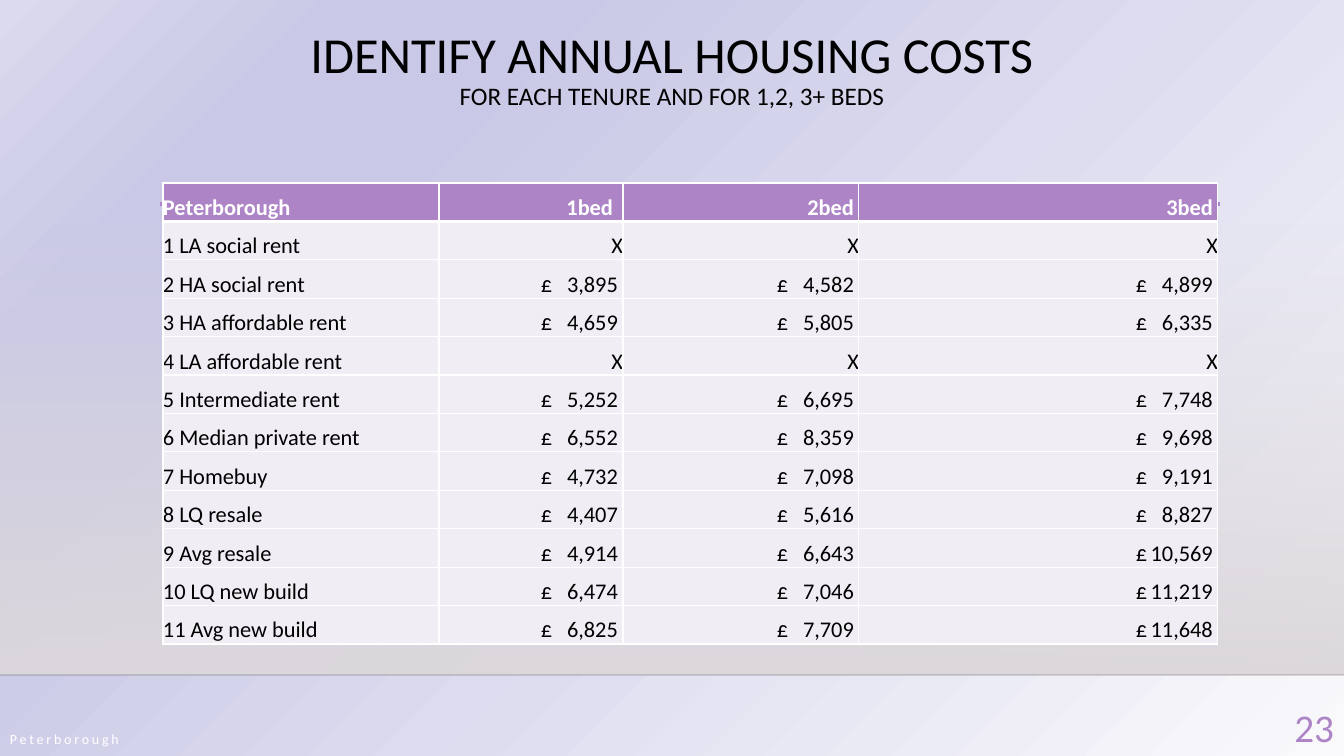
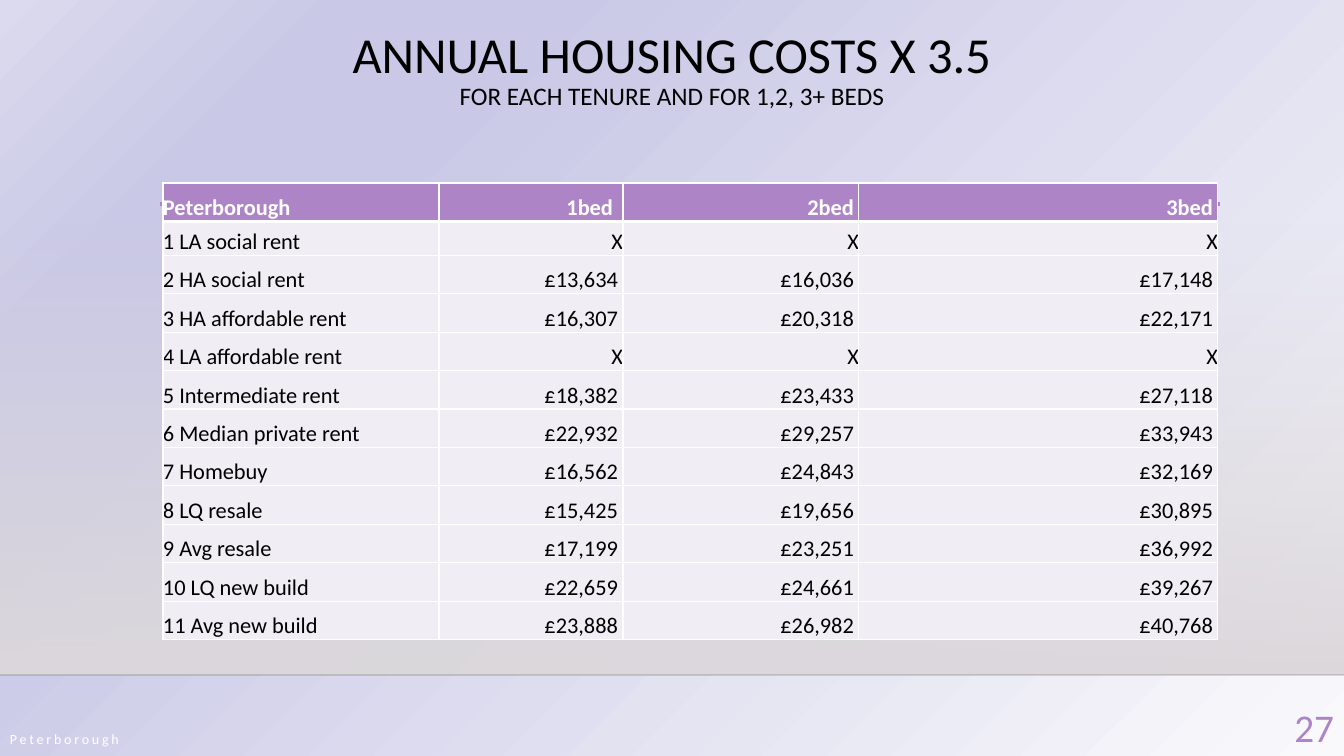
import pptx
import pptx.util
import pptx.dml.color
import pptx.enum.shapes
import pptx.enum.text
import pptx.oxml
import pptx.oxml.ns

SLIDE_W, SLIDE_H = 1344, 756
ALIGN = pptx.enum.text.PP_ALIGN
ANCHOR = pptx.enum.text.MSO_ANCHOR
qn = pptx.oxml.ns.qn

TENURES = ["LA social rent", "HA social rent", "HA affordable rent",
           "LA affordable rent", "Intermediate rent", "Median private rent",
           "Homebuy", "LQ resale", "Avg resale", "LQ new build", "Avg new build"]
HEADINGS = ["Peterborough", "1bed", "2bed", "3bed"]
NO_COST = ("X", "X", "X")
ANNUAL_COSTS = [
    NO_COST,
    ("3,895", "4,582", "4,899"),
    ("4,659", "5,805", "6,335"),
    NO_COST,
    ("5,252", "6,695", "7,748"),
    ("6,552", "8,359", "9,698"),
    ("4,732", "7,098", "9,191"),
    ("4,407", "5,616", "8,827"),
    ("4,914", "6,643", "10,569"),
    ("6,474", "7,046", "11,219"),
    ("6,825", "7,709", "11,648"),
]
INCOMES_NEEDED = [
    NO_COST,
    ("13,634", "16,036", "17,148"),
    ("16,307", "20,318", "22,171"),
    NO_COST,
    ("18,382", "23,433", "27,118"),
    ("22,932", "29,257", "33,943"),
    ("16,562", "24,843", "32,169"),
    ("15,425", "19,656", "30,895"),
    ("17,199", "23,251", "36,992"),
    ("22,659", "24,661", "39,267"),
    ("23,888", "26,982", "40,768"),
]


def px(n):
    return pptx.util.Emu(round(n * 12192000 / SLIDE_W))


def rgb(value):
    return pptx.dml.color.RGBColor.from_string(value)


def element(xml):
    ns = pptx.oxml.ns.nsdecls("a")
    return pptx.oxml.parse_xml(xml.replace(">", f" {ns}>", 1))


def set_gradient(holder, stops, direction):
    """Swap the solid fill in holder for a gradient of (place, colour, alpha)."""
    gs = "".join(f'<a:gs pos="{pos * 1000}"><a:srgbClr val="{color}">'
                 f'<a:alpha val="{alpha * 1000}"/></a:srgbClr></a:gs>'
                 for pos, color, alpha in stops)
    grad = element('<a:gradFill rotWithShape="1">'
                   f'<a:gsLst>{gs}</a:gsLst>{direction}</a:gradFill>')
    holder.replace(holder.find(qn("a:solidFill")), grad)


class Deck:
    FONT = "Calibri"
    BLACK, WHITE, ACCENT = "000000", "FFFFFF", "AD84C6"
    CELL, SHADE = "F1EDF5", "DCD8DC"
    COLUMNS = (276, 184, 236, 359)
    ROW_H = 461 / 12
    SPACE = 5

    def __init__(self):
        self.prs = pptx.Presentation()
        self.prs.slide_width, self.prs.slide_height = px(SLIDE_W), px(SLIDE_H)
        master = self.prs.slide_master
        master.background.fill.solid()
        stops = [(0, "F9F9FC", 100), (74, "C9C8E6", 100),
                 (83, "C9C8E6", 100), (100, "DBDAEE", 100)]
        set_gradient(master.element.find(".//" + qn("p:bgPr")), stops,
                     '<a:path path="circle"><a:fillToRect l="100000" t="100000"/></a:path>')

    def new_slide(self, title, subtitle, number):
        self.s = self.prs.slides.add_slide(self.prs.slide_layouts[5])
        # Shaded area and rules
        self.shade(0, 223, SLIDE_W, 452)
        self.rule(0, SLIDE_W, 675, "000001", 1, alpha=20)
        self.rule(160, 1220, 204, self.ACCENT, 2.5)
        # Title and footer
        self.title(title, subtitle)
        p = self.text("Peterborough", 0, 722, 548, 34, 10, self.WHITE,
                      ALIGN.LEFT, ANCHOR.MIDDLE)
        p.runs[0].font._element.set("spc", "200")
        self.text(str(number), 1255, 698, 89, 55, 28, self.ACCENT,
                  ALIGN.RIGHT, ANCHOR.TOP)

    def style(self, font, size, color, bold=False):
        font.name, font.size, font.bold = self.FONT, pptx.util.Pt(size), bold
        font.color.rgb = rgb(color)

    def shade(self, x, y, w, h):
        sp = self.s.shapes.add_shape(pptx.enum.shapes.MSO_SHAPE.RECTANGLE,
                                     px(x), px(y), px(w), px(h))
        sp.shadow.inherit = False
        sp.line.fill.background()
        sp.fill.solid()
        set_gradient(sp.element.spPr, [(0, self.SHADE, 0), (100, self.SHADE, 100)],
                     '<a:lin ang="5400000" scaled="0"/>')

    def rule(self, x1, x2, y, color, width, alpha=100):
        line = self.s.shapes.add_connector(pptx.enum.shapes.MSO_CONNECTOR.STRAIGHT,
                                           px(x1), px(y), px(x2), px(y))
        line.line.color.rgb = rgb(color)
        line.line.width = pptx.util.Pt(width)
        spPr = line.element.spPr
        spPr.find(".//" + qn("a:srgbClr")).append(
            element(f'<a:alpha val="{alpha * 1000}"></a:alpha>'))
        spPr.append(element("<a:effectLst></a:effectLst>"))

    def title(self, title, subtitle):
        sp = self.s.shapes.title
        sp.left, sp.top, sp.width, sp.height = px(71), px(14), px(1202), px(113)
        tf = sp.text_frame
        tf.auto_size = pptx.enum.text.MSO_AUTO_SIZE.NONE
        tf.vertical_anchor = ANCHOR.MIDDLE
        p = tf.paragraphs[0]
        p.text = f"{title}\v{subtitle}"
        p.alignment, p.line_spacing = ALIGN.CENTER, 0.9
        for r, size in zip(p.runs, (36, 18)):
            self.style(r.font, size, self.BLACK)

    def text(self, text, x, y, w, h, size, color, align, anchor):
        tf = self.s.shapes.add_textbox(px(x), px(y), px(w), px(h)).text_frame
        tf.word_wrap, tf.vertical_anchor = True, anchor
        p = tf.paragraphs[0]
        p.text, p.alignment = text, align
        self.style(p.runs[0].font, size, color)
        return p

    def cell(self, cell, text, fill, color, bold=False, align=ALIGN.LEFT,
             left=0, right=0, tab=None, top=1, bottom=1):
        cell.margin_left, cell.margin_right = px(left), px(right)
        cell.margin_top = cell.margin_bottom = 0
        cell.vertical_anchor = ANCHOR.BOTTOM
        p = cell.text_frame.paragraphs[0]
        p.text, p.alignment = text, align
        if tab:
            p._p.get_or_add_pPr().append(element(
                f'<a:tabLst><a:tab pos="{px(tab)}" algn="r"/></a:tabLst>'))
        self.style(p.runs[0].font, 16, color, bold)
        cell.fill.solid()
        cell.fill.fore_color.rgb = rgb(fill)
        tcPr = cell._tc.get_or_add_tcPr()
        for i, (side, pt) in enumerate(zip("LRTB", (1, 1, top, bottom))):
            tcPr.insert(i, element(
                f'<a:ln{side} w="{pptx.util.Pt(pt)}"><a:solidFill>'
                f'<a:srgbClr val="{self.WHITE}"/></a:solidFill></a:ln{side}>'))

    def cost_table(self, costs, accounting, first_row_h=ROW_H):
        """Accounting style lines up the pound signs at a fixed place."""
        heights = [self.ROW_H, first_row_h] + [self.ROW_H] * (len(costs) - 1)
        table = self.s.shapes.add_table(
            len(heights), len(self.COLUMNS), px(163), px(183),
            px(sum(self.COLUMNS)), px(sum(heights))).table
        table.horz_banding = False
        for column, width in zip(table.columns, self.COLUMNS):
            column.width = px(width)
        for row, height in zip(table.rows, heights):
            row.height = px(height)
        # Header row
        for c, heading in enumerate(HEADINGS):
            self.cell(table.cell(0, c), heading, self.ACCENT, self.WHITE, bold=True,
                      align=ALIGN.RIGHT if c else ALIGN.LEFT,
                      right=(0, 2 * self.SPACE, self.SPACE, self.SPACE)[c], bottom=3)
        # Tenure rows
        for i, (tenure, amounts) in enumerate(zip(TENURES, costs), 1):
            base = {"fill": self.CELL, "color": self.BLACK, "top": 3 if i == 1 else 1}
            self.cell(table.cell(i, 0), f"{i} {tenure}", **base)
            for c, amount in enumerate(amounts, 1):
                cell = table.cell(i, c)
                if amount == "X":
                    self.cell(cell, amount, align=ALIGN.RIGHT, **base)
                elif accounting:
                    self.cell(cell, f"£\t{amount}", left=self.COLUMNS[c] - 82,
                              tab=82 - self.SPACE, **base)
                else:
                    self.cell(cell, f"£{amount}", align=ALIGN.RIGHT,
                              right=self.SPACE, **base)


def main():
    deck = Deck()
    subtitle = "FOR EACH TENURE AND FOR 1,2, 3+ BEDS"

    # Annual costs
    deck.new_slide("IDENTIFY ANNUAL HOUSING COSTS", subtitle, 23)
    deck.cost_table(ANNUAL_COSTS, accounting=True)

    # Costs times 3.5
    deck.new_slide("ANNUAL HOUSING COSTS X 3.5", subtitle, 27)
    deck.cost_table(INCOMES_NEEDED, accounting=False, first_row_h=34)

    deck.prs.save("out.pptx")


if __name__ == "__main__":
    main()
